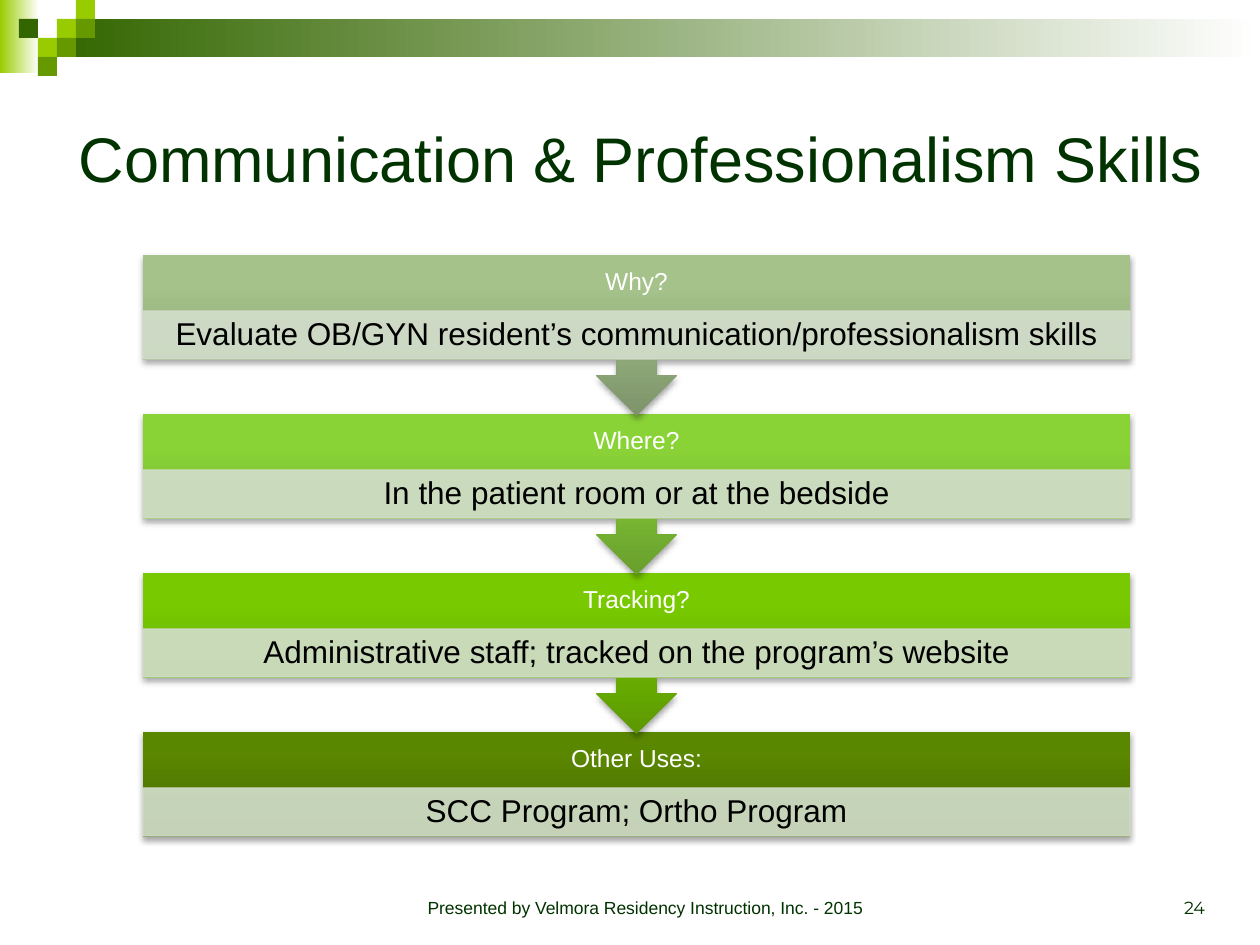
import pptx
import pptx.dml.color
import pptx.enum.shapes
import pptx.enum.text
import pptx.oxml
import pptx.oxml.ns
import pptx.util
from dataclasses import dataclass

PX = 914400 / 126  # EMU in one px
SHAPE = pptx.enum.shapes.MSO_SHAPE
ALIGN = pptx.enum.text.PP_ALIGN
ANCHOR = pptx.enum.text.MSO_ANCHOR
A = pptx.oxml.ns.nsdecls("a")


@dataclass(frozen=True)
class Theme:
    font: str = "Arial"
    number_font: str = "Montserrat"
    text: str = "003300"
    white: str = "FFFFFF"
    black: str = "000000"
    dark: str = "336600"
    mid: str = "669900"
    lime: str = "99CC00"
    panel: str = "D3DECC"
    title_size: int = 36
    heading_size: int = 14
    detail_size: int = 18
    footer_size: int = 10


THEME = Theme()

# Heading, detail, gradient from bottom to top
STAGES = [
    ("Why?", "Evaluate OB/GYN resident’s communication/professionalism skills",
     ("7E946B", "A4C28A")),
    ("Where?", "In the patient room or at the bedside", ("699F2D", "8AD337")),
    ("Tracking?", "Administrative staff; tracked on the program’s website",
     ("5C9802", "78C900")),
    ("Other Uses:", "SCC Program; Ortho Program", ("456800", "5A8700")),
]


def rgb(value):
    return pptx.dml.color.RGBColor.from_string(value)


def emu(*lengths):
    return [pptx.util.Emu(round(n * PX)) for n in lengths]


def add_block(slide, box, color=None, kind=SHAPE.RECTANGLE):
    sp = slide.shapes.add_shape(kind, *emu(*box))
    sp.shadow.inherit = False
    sp.line.fill.background()
    if color:
        sp.fill.solid()
        sp.fill.fore_color.rgb = rgb(color)
    return sp


def set_gradient(sp, colors, angle=0, end=1):
    sp.fill.gradient()
    sp.fill.gradient_angle = angle
    for stop, color, position in zip(sp.fill.gradient_stops, colors, (0, end)):
        stop.color.rgb = rgb(color)
        stop.position = position


def set_text(sp, text, size, color, align=ALIGN.CENTER, anchor=ANCHOR.MIDDLE,
             font=THEME.font, inset=(13, 6), spacing=1.0):
    tf = sp.text_frame
    tf.word_wrap = True
    tf.auto_size = pptx.enum.text.MSO_AUTO_SIZE.NONE
    tf.vertical_anchor = anchor
    tf.margin_left, tf.margin_top = tf.margin_right, tf.margin_bottom = emu(*inset)
    tf.text = text
    p = tf.paragraphs[0]
    p.alignment = align
    p.line_spacing = spacing
    r = p.runs[0]
    r.font.name = font
    r.font.size = pptx.util.Pt(size)
    r.font.color.rgb = rgb(color)


def add_text(slide, box, text, size, color, **options):
    set_text(slide.shapes.add_textbox(*emu(*box)), text, size, color, **options)


def add_shadow(sp):
    effects = sp._element.spPr.find(pptx.oxml.ns.qn("a:effectLst"))
    effects.append(pptx.oxml.parse_xml(
        f'<a:outerShdw {A} blurRad="40000" dist="23000" dir="5400000" rotWithShape="0">'
        f'<a:srgbClr val="{THEME.black}"><a:alpha val="35000"/></a:srgbClr></a:outerShdw>'))


def add_header(slide, box):
    """Fading bars with a stepped pattern of squares at the left."""
    x, y, w, h = box
    unit = h // 4
    set_gradient(add_block(slide, (x, y, 39, 73)), (THEME.lime, THEME.white))
    set_gradient(add_block(slide, (x + 3 * unit, y + unit, w - 3 * unit, 2 * unit)),
                 (THEME.dark, THEME.white))
    squares = [(3, 1, THEME.lime), (4, 0, THEME.lime), (4, 1, THEME.mid),
               (2, 2, THEME.lime), (1, 1, THEME.dark), (3, 2, THEME.mid),
               (2, 3, THEME.mid)]
    for col, row, color in squares:
        add_block(slide, (x + col * unit, y + row * unit, unit, unit), color)


def add_title(slide, box, text):
    title = slide.shapes.title
    title.left, title.top, title.width, title.height = emu(*box)
    set_text(title, text, THEME.title_size, THEME.text)


def add_stage(slide, box, stage, last):
    """A heading over a pale panel, pointing to the next stage."""
    x, y, w, h = box
    heading, detail, colors = stage
    if last:
        body = add_block(slide, (x, y, w, 105))
    else:
        body = add_block(slide, box, kind=SHAPE.DOWN_ARROW_CALLOUT)
    set_gradient(body, colors, angle=90, end=0.8)
    add_shadow(body)
    add_text(slide, (x, y, w, 56), heading, THEME.heading_size, THEME.white,
             inset=(14, 14), spacing=0.9)

    # Translucent panel
    panel = add_block(slide, (x, y + 56, w, 48), THEME.panel)
    panel.line.color.rgb = rgb(THEME.panel)
    panel.line.width = pptx.util.Pt(0.75)
    for color in panel._element.spPr.iter(pptx.oxml.ns.qn("a:srgbClr")):
        color.append(pptx.oxml.parse_xml(f'<a:alpha {A} val="90000"/>'))
    set_text(panel, detail, THEME.detail_size, THEME.black, inset=(18, 4), spacing=0.9)


def add_flow(slide, box, stages):
    x, y, w, h = box
    pitch = h // len(stages)
    # Drawn upwards so that each arrow lies over the stage below it
    for i, stage in reversed(list(enumerate(stages))):
        add_stage(slide, (x, y + i * pitch, w, pitch + 2), stage, i == len(stages) - 1)


def add_footer(slide, box):
    x, y, w, h = box
    add_text(slide, (x, y, 514, h), "Presented by Velmora Residency Instruction, Inc. - 2015",
             THEME.footer_size, THEME.text, anchor=ANCHOR.BOTTOM)
    add_text(slide, (x + w - 294, y, 294, h), "24", THEME.footer_size, THEME.text,
             align=ALIGN.RIGHT, anchor=ANCHOR.BOTTOM, font=THEME.number_font)


def main():
    prs = pptx.Presentation()
    prs.slide_width, prs.slide_height = emu(1260, 945)
    slide = prs.slides.add_slide(prs.slide_layouts[5])
    add_header(slide, (0, 0, 1260, 76))
    add_title(slide, (63, 63, 1155, 189), "Communication & Professionalism Skills")
    add_footer(slide, (388, 861, 830, 63))
    add_flow(slide, (143, 255, 987, 636), STAGES)
    prs.save("out.pptx")


if __name__ == "__main__":
    main()
